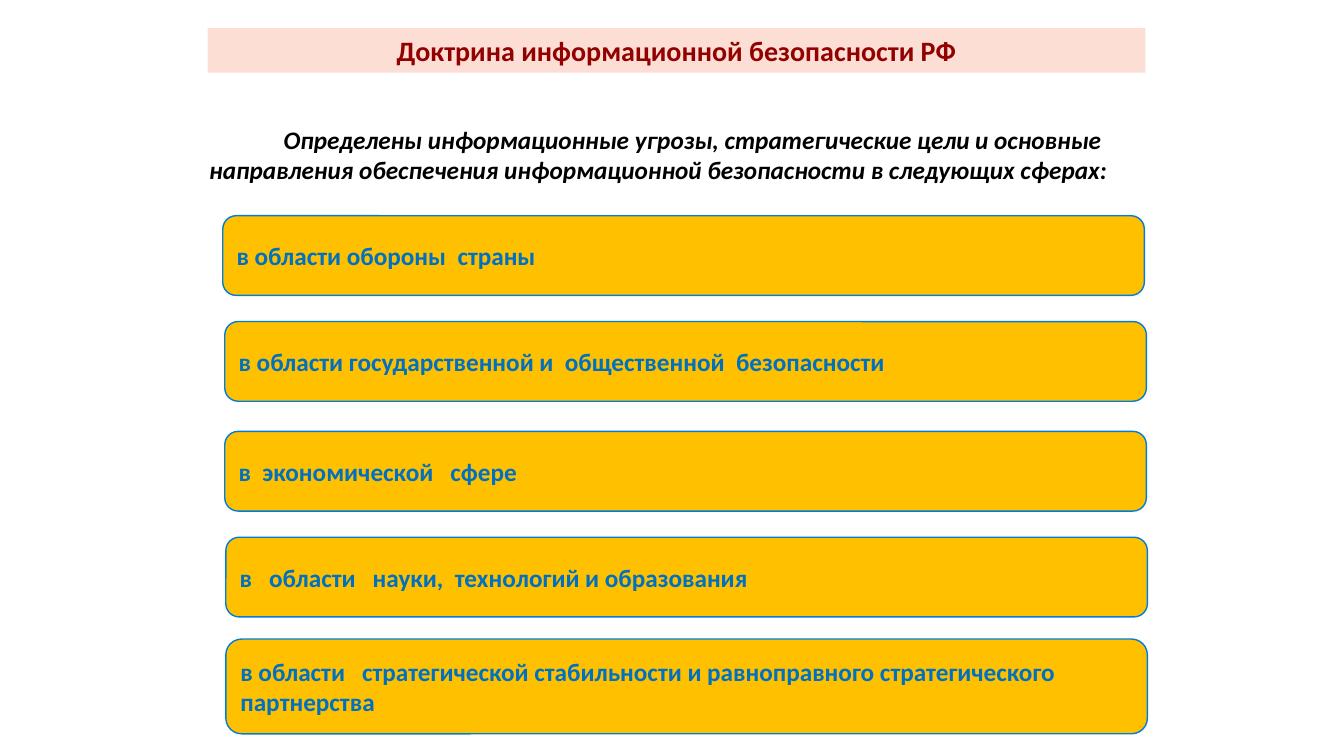
"""Builds a slide listing the spheres covered by the information security doctrine."""
from pptx import Presentation
from pptx.dml.color import RGBColor
from pptx.enum.shapes import MSO_SHAPE
from pptx.enum.text import MSO_ANCHOR, PP_ALIGN
from pptx.util import Inches, Pt

ROUNDED = MSO_SHAPE.ROUNDED_RECTANGLE
TOP, MIDDLE = MSO_ANCHOR.TOP, MSO_ANCHOR.MIDDLE
LEFT, CENTER = PP_ALIGN.LEFT, PP_ALIGN.CENTER

TITLE = "Доктрина информационной безопасности РФ"
INTRO = ("Определены информационные угрозы, стратегические цели и основные "
         "направления обеспечения информационной безопасности в следующих сферах:\t")
SPHERES = [
    ("в области обороны  страны", 2.21, 2.14, 0.79),
    ("в области государственной и  общественной  безопасности", 2.23, 3.19, 0.79),
    ("в  экономической   сфере", 2.23, 4.28, 0.79),
    ("в   области   науки,  технологий и образования", 2.24, 5.33, 0.79),
    ("в области   стратегической стабильности и равноправного стратегического партнерства",
     2.24, 6.34, 0.94),
]
SPHERE_WIDTH = 9.14
COLORS = {"title": "920000", "title_fill": "FCDED4", "intro": "000000",
          "sphere": "0070C0", "sphere_fill": "FFC000", "sphere_line": "007DDA"}


def rgb(name):
    return RGBColor.from_string(COLORS[name])


def write(sp, text, size, color, align, anchor, italic=False):
    tf = sp.text_frame
    tf.text = text
    tf.word_wrap = True
    tf.vertical_anchor = anchor
    tf.margin_left = tf.margin_right = Inches(0.1)
    tf.margin_top = tf.margin_bottom = Inches(0.05)
    p = tf.paragraphs[0]
    p.alignment = align
    p.line_spacing = 1.0
    p.space_before = Pt(0)
    for r in p.runs:
        r.font.name = "Calibri"
        r.font.size = Pt(size)
        r.font.bold = True
        r.font.italic = italic
        r.font.color.rgb = rgb(color)
    return p


def fill(sp, color):
    sp.fill.solid()
    sp.fill.fore_color.rgb = rgb(color)


def add_title(s):
    sp = s.shapes.title
    sp.left, sp.top, sp.width, sp.height = map(Inches, (2.06, 0.28, 9.3, 0.44))
    fill(sp, "title_fill")
    write(sp, TITLE, 20, "title", CENTER, TOP)


def add_intro(s):
    sp = s.shapes.add_textbox(*map(Inches, (1.78, 1.18, 9.59, 0.71)))
    p = write(sp, INTRO, 18, "intro", CENTER, TOP, italic=True)
    pPr = p._p.get_or_add_pPr()
    pPr.set("marL", "0")
    pPr.set("indent", str(Inches(0.59)))


def add_sphere(s, text, left, top, height):
    sp = s.shapes.add_shape(ROUNDED, *map(Inches, (left, top, SPHERE_WIDTH, height)))
    sp.shadow.inherit = False
    fill(sp, "sphere_fill")
    sp.line.color.rgb = rgb("sphere_line")
    sp.line.width = Pt(1)
    write(sp, text, 18, "sphere", LEFT, MIDDLE)


def main():
    prs = Presentation()
    prs.slide_width, prs.slide_height = Inches(13.33), Inches(7.5)
    s = prs.slides.add_slide(prs.slide_layouts[5])
    add_title(s)
    add_intro(s)
    for sphere in SPHERES:
        add_sphere(s, *sphere)
    prs.save("out.pptx")


if __name__ == "__main__":
    main()
